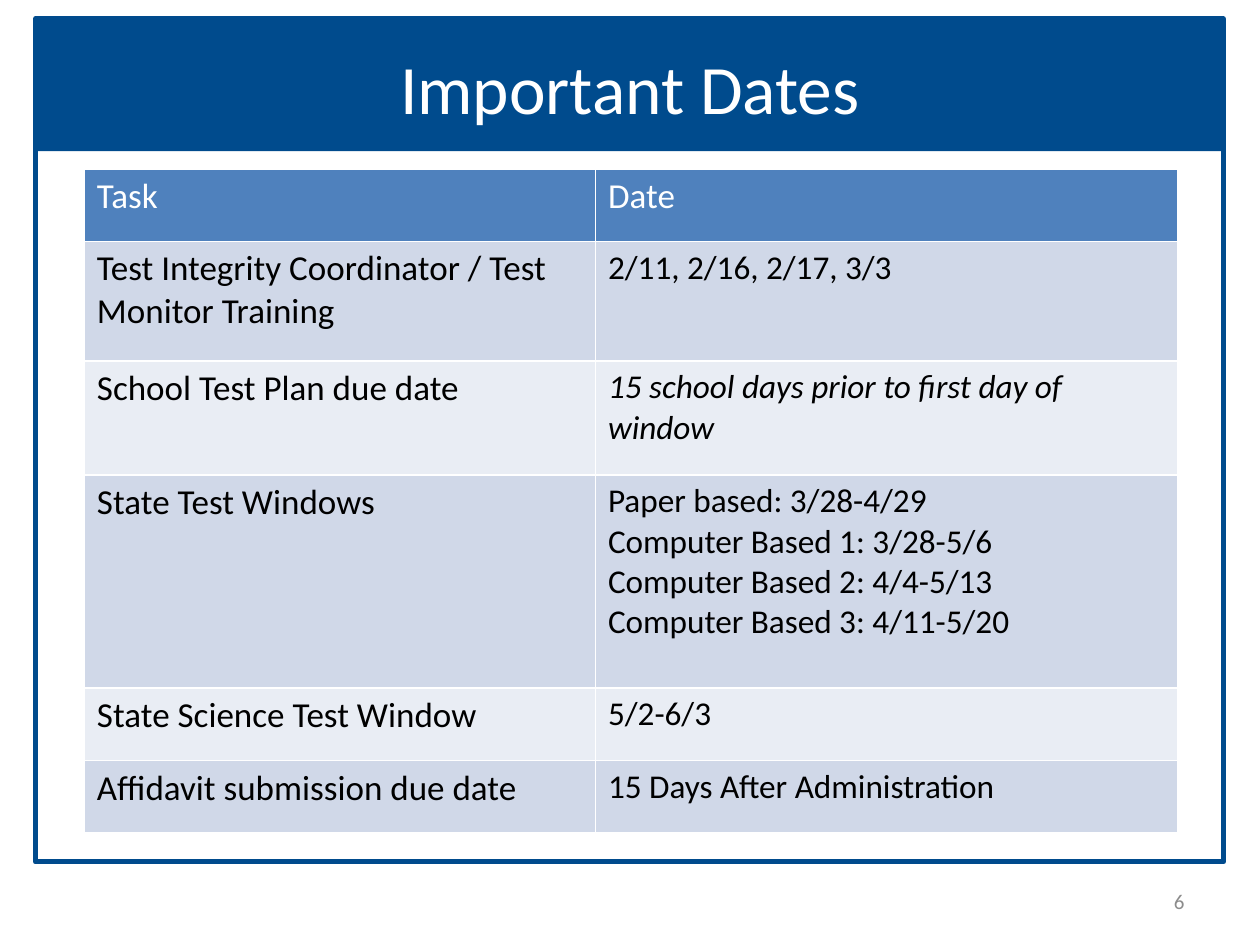
"""Build the Important Dates slide with its framed title band and task table."""
from pptx import Presentation
from pptx.dml.color import RGBColor
from pptx.enum.shapes import MSO_SHAPE
from pptx.enum.text import MSO_ANCHOR, PP_ALIGN
from pptx.util import Pt

RECTANGLE = MSO_SHAPE.RECTANGLE
MIDDLE, TOP = MSO_ANCHOR.MIDDLE, MSO_ANCHOR.TOP
LEFT, CENTER, RIGHT = PP_ALIGN.LEFT, PP_ALIGN.CENTER, PP_ALIGN.RIGHT

TITLE = "Important Dates"
PAGE_NUMBER = "6"
HEADER = ("Task", "Date")
TASKS = [
    ("Test Integrity Coordinator / Test Monitor Training", ["2/11, 2/16, 2/17, 3/3"]),
    ("School Test Plan due date", ["15 school days prior to first day of window"]),
    ("State Test Windows", [
        "Paper based: 3/28-4/29",
        "Computer Based 1: 3/28-5/6",
        "Computer Based 2: 4/4-5/13",
        "Computer Based 3: 4/11-5/20",
    ]),
    ("State Science Test Window", ["5/2-6/3"]),
    ("Affidavit submission due date", ["15 Days After Administration"]),
]
ITALIC_ROW = 2

COLORS = {
    "navy": "004B8D", "white": "FFFFFF", "black": "000000", "gray": "8C8C8C",
    "header": "4F81BD", "odd": "D0D8E8", "even": "E9EDF4",
}
FONT = "Calibri"
FRAME_LEFT, FRAME_TOP, FRAME_WIDTH = 20.2, 10.8, 679
BAND_HEIGHT, FRAME_HEIGHT = 75.6, 481.7
TABLE_LEFT, TABLE_TOP = 48.2, 96.5
COLUMN_WIDTHS = [292.1, 332.9]
ROW_HEIGHTS = [41.4, 68.4, 65.2, 121.7, 41.4, 41.4]


def color(name):
    """Return the named colour."""
    return RGBColor.from_string(COLORS[name])


def write_text(text_frame, lines, size, color_name, align=LEFT, italic=False):
    """Write one formatted paragraph for each line."""
    text_frame.word_wrap = True
    for index, line in enumerate(lines):
        paragraph = text_frame.paragraphs[0] if index == 0 else text_frame.add_paragraph()
        paragraph.alignment = align
        run = paragraph.add_run()
        run.text = line
        run.font.name = FONT
        run.font.size = Pt(size)
        run.font.bold = False
        run.font.italic = italic
        run.font.color.rgb = color(color_name)


def add_rectangle(slide, height):
    """Add a plain rectangle at the frame's top, behind the title."""
    shape = slide.shapes.add_shape(
        RECTANGLE, Pt(FRAME_LEFT), Pt(FRAME_TOP), Pt(FRAME_WIDTH), Pt(height))
    shape.shadow.inherit = False
    slide.shapes.title.element.addprevious(shape.element)
    return shape


def add_frame(slide):
    """Add the filled title band and the outline around the content."""
    band = add_rectangle(slide, BAND_HEIGHT)
    band.fill.solid()
    band.fill.fore_color.rgb = color("navy")
    band.line.fill.background()
    outline = add_rectangle(slide, FRAME_HEIGHT)
    outline.fill.background()
    outline.line.color.rgb = color("navy")
    outline.line.width = Pt(3)


def add_title(slide):
    """Place and format the title placeholder."""
    title = slide.shapes.title
    title.left, title.top, title.width, title.height = Pt(36), Pt(21.6), Pt(648), Pt(56.2)
    title.text_frame.vertical_anchor = MIDDLE
    write_text(title.text_frame, [TITLE], 39.6, "white", align=CENTER)


def add_table(slide):
    """Add the table of tasks and dates."""
    rows = [(HEADER[0], [HEADER[1]])] + TASKS
    table = slide.shapes.add_table(
        len(rows), len(HEADER), Pt(TABLE_LEFT), Pt(TABLE_TOP),
        Pt(sum(COLUMN_WIDTHS)), Pt(sum(ROW_HEIGHTS))).table
    for column, width in zip(table.columns, COLUMN_WIDTHS):
        column.width = Pt(width)
    for row_index, (task, dates) in enumerate(rows):
        table.rows[row_index].height = Pt(ROW_HEIGHTS[row_index])
        is_header = row_index == 0
        fill_name = "header" if is_header else "odd" if row_index % 2 else "even"
        for column_index, lines in enumerate(([task], dates)):
            cell = table.cell(row_index, column_index)
            cell.fill.solid()
            cell.fill.fore_color.rgb = color(fill_name)
            cell.vertical_anchor = TOP
            is_date = column_index == 1 and not is_header
            write_text(cell.text_frame, lines, 19 if is_date else 20,
                       "white" if is_header else "black",
                       italic=is_date and row_index == ITALIC_ROW)


def add_page_number(slide):
    """Add the page number at the lower right."""
    box = slide.shapes.add_textbox(Pt(516), Pt(500.5), Pt(168), Pt(28.8))
    box.text_frame.vertical_anchor = MIDDLE
    write_text(box.text_frame, [PAGE_NUMBER], 12, "gray", align=RIGHT)


def main():
    """Build and save the presentation."""
    presentation = Presentation()
    presentation.slide_width, presentation.slide_height = Pt(720), Pt(540)
    slide = presentation.slides.add_slide(presentation.slide_layouts[5])
    add_frame(slide)
    add_title(slide)
    add_table(slide)
    add_page_number(slide)
    presentation.save("out.pptx")


if __name__ == "__main__":
    main()
